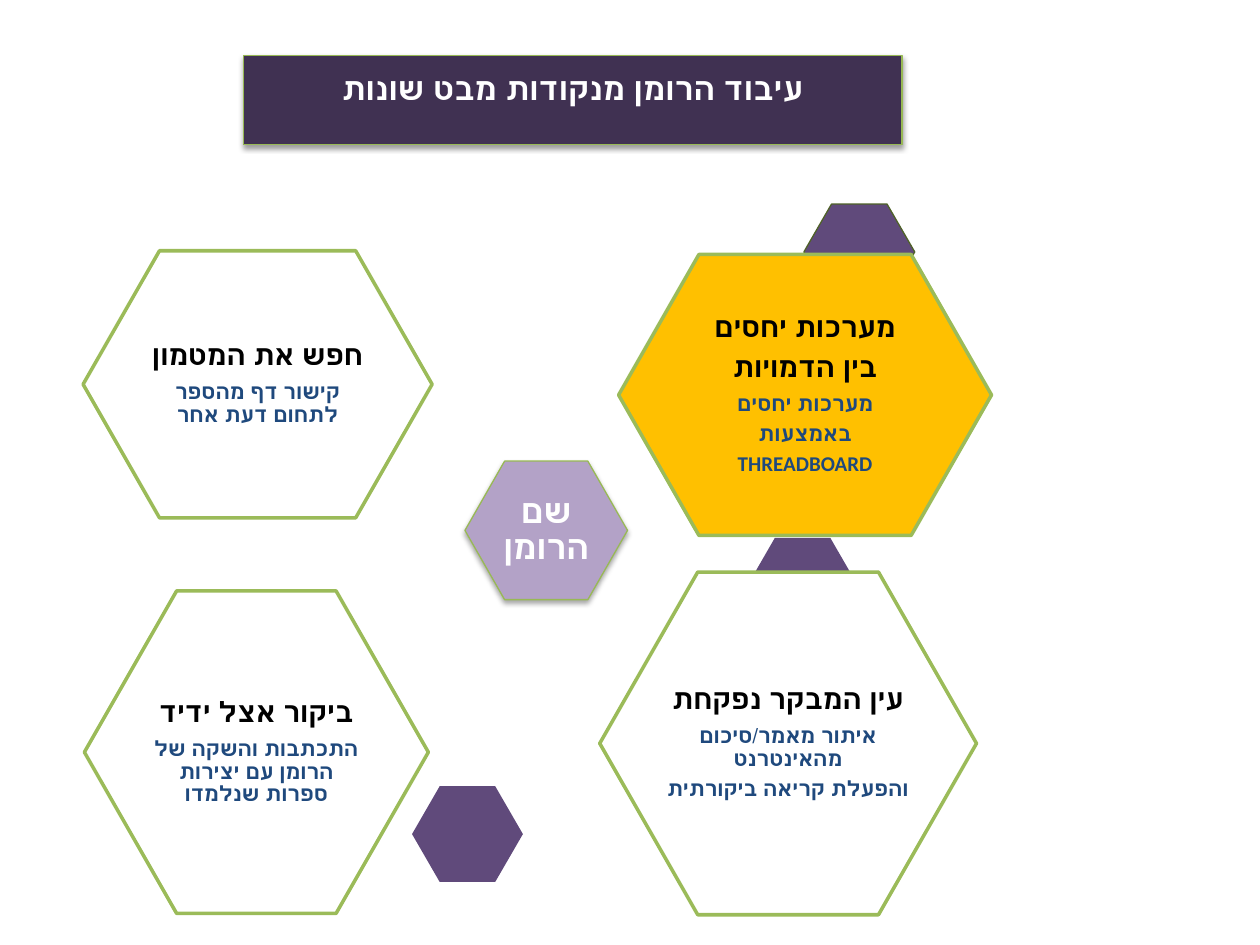
from lxml import etree
from pptx import Presentation
from pptx.dml.color import RGBColor
from pptx.enum.shapes import MSO_SHAPE
from pptx.enum.text import MSO_ANCHOR, MSO_AUTO_SIZE, PP_ALIGN
from pptx.oxml import parse_xml
from pptx.oxml.ns import nsdecls, qn
from pptx.util import Inches, Pt

WHITE = RGBColor(0xFF, 0xFF, 0xFF)
BLACK = RGBColor(0x00, 0x00, 0x00)
NAVY = RGBColor(0x1F, 0x49, 0x7D)
PLUM = RGBColor(0x40, 0x31, 0x52)
PURPLE = RGBColor(0x60, 0x4A, 0x7B)
LILAC = RGBColor(0xB3, 0xA2, 0xC7)
GOLD = RGBColor(0xFF, 0xC0, 0x00)
GREEN = RGBColor(0x9B, 0xBB, 0x59)
SOFT_GREEN = RGBColor(0x98, 0xB9, 0x55)
OLIVE = RGBColor(0x4F, 0x62, 0x28)

# The slide is a grid of 100 columns by 75 rows
COLS, ROWS = 100, 75
SLIDE_W, SLIDE_H = Inches(10), Inches(7.5)

HEADING = dict(size=Pt(16), name="Calibri", bold=True)
DETAIL = dict(size=Pt(12), name="Calibri", bold=True)
CENTRE = dict(size=Pt(19), name="Karla", bold=True)
TITLE = dict(size=Pt(18), name="Karla", bold=True)


def grid(col, row, cols, rows):
    return (round(col * SLIDE_W / COLS), round(row * SLIDE_H / ROWS),
            round(cols * SLIDE_W / COLS), round(rows * SLIDE_H / ROWS))


def set_attrs(obj, values):
    for key, value in values.items():
        setattr(obj, key, value)


def paint(sp, fill, line=None, width=0.75):
    sp.fill.solid()
    sp.fill.fore_color.rgb = fill
    if line is None:
        sp.line.fill.background()
    else:
        sp.line.color.rgb = line
        sp.line.width = Pt(width)


def drop_shadow(sp, alpha, distance):
    props = sp._element.spPr
    for old in props.findall(qn("a:effectLst")):
        props.remove(old)
    props.append(parse_xml(
        f'<a:effectLst {nsdecls("a")}><a:outerShdw blurRad="{Pt(3.1)}" '
        f'dist="{Pt(distance)}" dir="5400000" rotWithShape="0">'
        f'<a:srgbClr val="000000"><a:alpha val="{alpha * 1000}"/></a:srgbClr>'
        '</a:outerShdw></a:effectLst>'))


def write(p, text, font, color):
    p.alignment = PP_ALIGN.CENTER
    p._p.get_or_add_pPr().set("rtl", "1")
    r = p.add_run()
    r.text = text
    set_attrs(r.font, font)
    r.font.color.rgb = color


def add_hexagon(slide, cell, fill, line=None, width=0.75, adj=0.286):
    sp = slide.shapes.add_shape(MSO_SHAPE.HEXAGON, *grid(*cell))
    sp.adjustments[0] = adj
    sp.shadow.inherit = False
    paint(sp, fill, line, width)
    return sp


def add_label(slide, cell, inset, lines, margin=0.02):
    """Centre the lines in the cell, inset by a share of each side."""
    col, row, cols, rows = cell
    inner = (col + inset * cols, row + inset * rows,
             cols * (1 - 2 * inset), rows * (1 - 2 * inset))
    tf = slide.shapes.add_textbox(*grid(*inner)).text_frame
    sides = ("left", "top", "right", "bottom")
    set_attrs(tf, {f"margin_{side}": Inches(margin) for side in sides})
    set_attrs(tf, dict(word_wrap=True, vertical_anchor=MSO_ANCHOR.MIDDLE))
    for i, (text, font, color) in enumerate(lines):
        p = tf.paragraphs[0] if i == 0 else tf.add_paragraph()
        p.line_spacing = 0.9
        p.space_after = Pt(round(font["size"].pt * 0.35, 1))
        write(p, text, font, color)


def add_card(slide, cell, inset, headings, details, fill=WHITE):
    add_hexagon(slide, cell, fill, GREEN, 2)
    add_label(slide, cell, inset,
              [(text, HEADING, BLACK) for text in headings]
              + [(text, DETAIL, NAVY) for text in details])


def add_accent(slide, col, row, line=None):
    add_hexagon(slide, (col, row, 8.8, 7.6), PURPLE, line, adj=0.289)


def add_title(slide, cell, text):
    sp = slide.shapes.title
    set_attrs(sp, dict(zip(("left", "top", "width", "height"), grid(*cell))))
    geom = etree.SubElement(sp._element.spPr, qn("a:prstGeom"), prst="roundRect")
    etree.SubElement(geom, qn("a:avLst"))
    paint(sp, PLUM, SOFT_GREEN)
    drop_shadow(sp, 38, 1.6)
    tf = sp.text_frame
    set_attrs(tf, dict(auto_size=MSO_AUTO_SIZE.NONE, word_wrap=True,
                       vertical_anchor=MSO_ANCHOR.MIDDLE,
                       margin_bottom=Inches(0.25)))
    write(tf.paragraphs[0], text, TITLE, WHITE)


def main():
    prs = Presentation()
    prs.slide_width, prs.slide_height = SLIDE_W, SLIDE_H
    slide = prs.slides.add_slide(prs.slide_layouts[5])

    # Title bar
    add_title(slide, (19.3, 4.4, 52.3, 7.1), "עיבוד הרומן מנקודות מבט שונות")

    # Centre hexagon
    centre = (36.9, 36.6, 12.9, 11)
    drop_shadow(add_hexagon(slide, centre, LILAC, SOFT_GREEN), 35, 1.8)
    add_label(slide, centre, 0.16, [("שם הרומן", CENTRE, WHITE)], 0.03)

    # Activity cards, with accents partly behind them
    add_accent(slide, 63.8, 16.2, OLIVE)
    add_card(slide, (6.7, 46.9, 27.3, 25.6), 0.18, ["ביקור אצל ידיד"],
             ["התכתבות והשקה של הרומן עם יצירות ספרות שנלמדו"])
    add_accent(slide, 59.3, 42.7)
    add_card(slide, (49.1, 20.2, 29.6, 22.3), 0.16,
             ["מערכות יחסים", "בין הדמויות"],
             ["מערכות יחסים", "באמצעות", "THREADBOARD"], GOLD)
    add_accent(slide, 32.7, 62.4)
    add_card(slide, (47.6, 45.4, 29.9, 27.2), 0.17, ["עין המבקר נפקחת"],
             ["איתור מאמר/סיכום מהאינטרנט", "והפעלת קריאה ביקורתית"])
    add_card(slide, (6.6, 19.9, 27.7, 21.2), 0.16, ["חפש את המטמון"],
             ["קישור דף מהספר לתחום דעת אחר"])

    prs.save("out.pptx")


if __name__ == "__main__":
    main()
